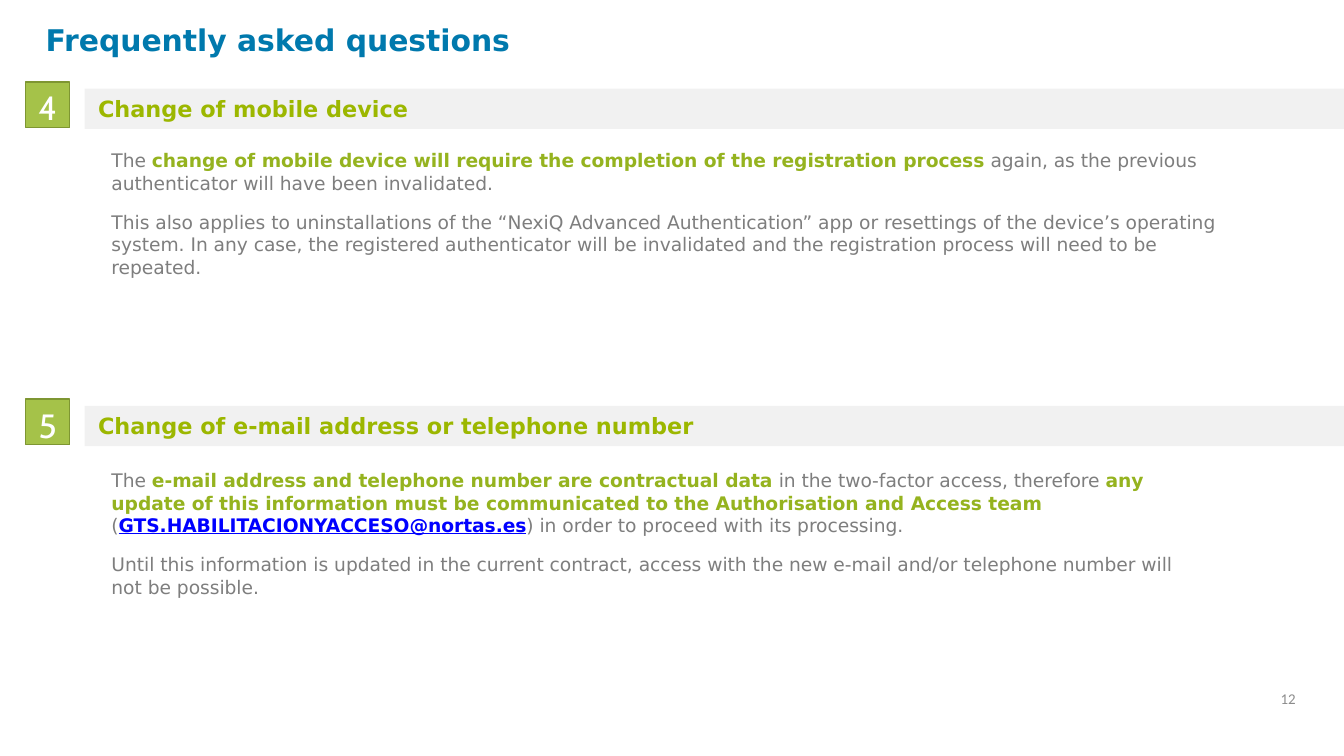
"""Build the frequently asked questions slide on device and contact changes."""
import dataclasses

import pptx
import pptx.dml.color
import pptx.enum.shapes
import pptx.enum.text
import pptx.util

Inches = pptx.util.Inches
Pt = pptx.util.Pt
Rgb = pptx.dml.color.RGBColor.from_string
RECT = pptx.enum.shapes.MSO_SHAPE.RECTANGLE
ALIGN = pptx.enum.text.PP_ALIGN
ANCHOR = pptx.enum.text.MSO_ANCHOR


@dataclasses.dataclass(frozen=True)
class Theme:
    sans: str = "DejaVu Sans"
    badge: str = "Cabin"
    plain: str = "Calibri"
    blue: str = "0079AD"
    lime: str = "9CB700"
    green: str = "95B31F"
    gray: str = "7E7E7E"
    pale: str = "8C8C8C"
    link: str = "0000FF"
    band: str = "F1F1F1"
    tile: str = "A5C249"
    edge: str = "7E9632"
    white: str = "FFFFFF"
    title: int = 16
    head: int = 12
    body: int = 10
    digit: int = 18
    page: int = 8


theme = Theme()


def write(shape, paras, size, color, face=theme.sans, bold=False, top=0.01, left=0.01):
    frame = shape.text_frame
    frame.word_wrap = True
    frame.margin_left, frame.margin_top = Inches(left), Inches(top)
    frame.margin_right = frame.margin_bottom = 0
    frame.vertical_anchor = ANCHOR.TOP
    for i, parts in enumerate(paras):
        para = frame.add_paragraph() if i else frame.paragraphs[0]
        para.alignment = ALIGN.LEFT
        if i:
            para.space_before = Pt(9)
        para.font.name, para.font.size = face, Pt(size)
        para.font.bold = bold
        para.font.color.rgb = Rgb(color)
        for text, tint in parts:
            run = para.add_run()
            run.text = text
            if tint:
                run.font.bold = True
                run.font.color.rgb = Rgb(tint)
                run.font.underline = tint == theme.link
    return frame


def block(left, top, width, height, fill):
    shape = slide.shapes.add_shape(RECT, Inches(left), Inches(top), Inches(width), Inches(height))
    shape.shadow.inherit = False
    shape.fill.solid()
    shape.fill.fore_color.rgb = Rgb(fill)
    shape.line.fill.background()
    return shape


deck = pptx.Presentation()
deck.slide_width, deck.slide_height = Inches(10), Inches(10 * 9 / 16)
slide = deck.slides.add_slide(deck.slide_layouts[6])

title = slide.shapes.add_textbox(Inches(0.32), Inches(0.16), Inches(4.51), Inches(0.28))
write(title, [[("Frequently asked questions", None)]], theme.title, theme.blue,
      bold=True, top=0, left=0.02)

topics = [
    ("4", "Change of mobile device", 0.66, 2.43, 1.1, 8.37, [
        [("The ", None),
         ("change of mobile device will require the completion of the registration process ", theme.green),
         ("again, as the previous authenticator will have been invalidated.", None)],
        [("This also applies to uninstallations of the “NexiQ Advanced Authentication” app or "
          "resettings of the device’s operating system. In any case, the registered authenticator "
          "will be invalidated and the registration process will need to be repeated.", None)],
    ]),
    ("5", "Change of e-mail address or telephone number", 3.02, 4.83, 3.48, 8.1, [
        [("The ", None),
         ("e-mail address and telephone number are contractual data ", theme.green),
         ("in the two-factor access, therefore ", None),
         ("any update of this information must be communicated to the Authorisation and Access team ",
          theme.green),
         ("(", None),
         ("GTS.HABILITACIONYACCESO@nortas.es", theme.link),
         (") in order to proceed with its processing.", None)],
        [("Until this information is updated in the current contract, access with the new e-mail "
          "and/or telephone number will not be possible.", None)],
    ]),
]

for digit, head, top, span, start, width, paras in topics:
    block(0.63, top, 9.37, 0.3, theme.band)

    label = slide.shapes.add_textbox(Inches(0.72), Inches(top + 0.03), Inches(span), Inches(0.23))
    write(label, [[(head, None)]], theme.head, theme.lime, bold=True, top=0.02)

    tile = block(0.19, top - 0.05, 0.33, 0.34, theme.tile)
    tile.line.color.rgb = Rgb(theme.edge)
    tile.line.width = Pt(0.72)
    frame = write(tile, [[(digit, None)]], theme.digit, theme.white, theme.badge, top=0.04, left=0)
    frame.paragraphs[0].alignment = ALIGN.CENTER

    text = slide.shapes.add_textbox(Inches(0.82), Inches(start), Inches(width), Inches(0.99))
    write(text, paras, theme.body, theme.gray)

page = slide.shapes.add_textbox(Inches(9.43), Inches(5.07), Inches(0.57), Inches(0.25))
frame = write(page, [[("12", None)]], theme.page, theme.pale, theme.plain, top=0, left=0.1)
frame.vertical_anchor = ANCHOR.MIDDLE

deck.save("out.pptx")
